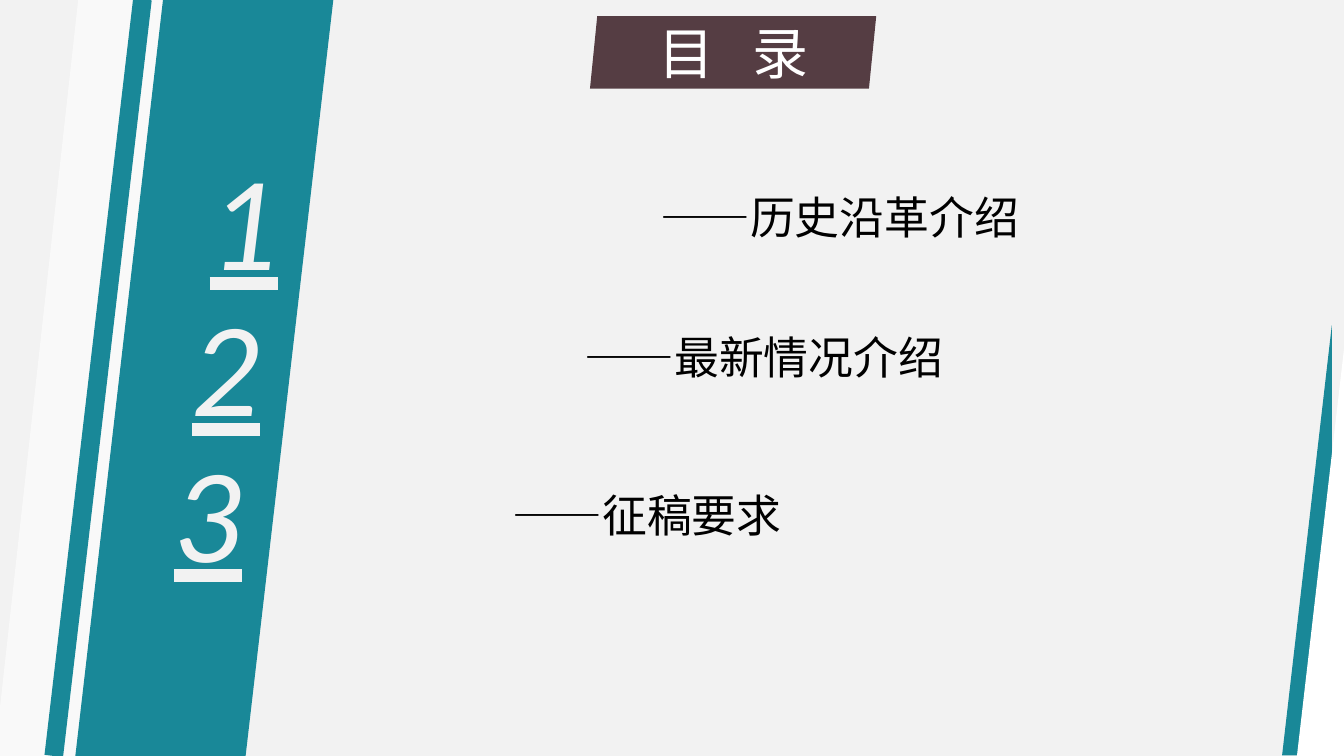
from pptx import Presentation
from pptx.dml.color import RGBColor
from pptx.enum.shapes import MSO_CONNECTOR, MSO_SHAPE as SHAPE
from pptx.enum.text import MSO_ANCHOR, MSO_AUTO_SIZE, PP_ALIGN
from pptx.oxml.ns import qn
from pptx.util import Inches, Pt
from lxml.etree import SubElement

TEAL, WHITE, PALE, PLUM, BLACK = "198898", "FFFFFF", "F2F2F2", "553D43", "000000"

presentation = Presentation()
presentation.slide_width = Inches(10)
presentation.slide_height = presentation.slide_width * 9 // 16
column = presentation.slide_width / 100
row = presentation.slide_height / 100


def paint(fill, color):
    fill.solid()
    fill.fore_color.rgb = RGBColor.from_string(color)


def write(shape, texts, size, color):
    frame = shape.text_frame
    frame.word_wrap = True
    frame.auto_size = MSO_AUTO_SIZE.NONE
    frame.margin_left = frame.margin_right = Inches(0.07)
    frame.margin_top = frame.margin_bottom = Inches(0.04)
    paragraph = frame.paragraphs[0]
    for text in texts:
        paragraph.add_run().text = text
    paragraph.font.name = "Calibri"
    paragraph.font.size = Pt(size)
    paint(paragraph.font.fill, color)
    return paragraph


slide = presentation.slides.add_slide(presentation.slide_layouts[5])
paint(slide.background.fill, PALE)

decorations = [
    (SHAPE.PARALLELOGRAM, -0.4, -0.1, 24.9, 100.1, WHITE, 0.25),
    (SHAPE.PARALLELOGRAM, 5.6, 0, 19.2, 100.1, TEAL, 0.34),
    (SHAPE.RIGHT_TRIANGLE, 95.4, 43.02, 3.7, 56.9, TEAL, None),
    (SHAPE.RIGHT_TRIANGLE, 96.5, 43.2, 3.7, 56.9, WHITE, None),
    (SHAPE.PARALLELOGRAM, 43.9, 2.13, 21.3, 9.6, PLUM, 0.1),
]
panels = []
for kind, left, top, width, height, color, slant in decorations:
    shape = slide.shapes.add_shape(
        kind, int(left * column), int(top * row), int(width * column), int(height * row))
    shape.shadow.inherit = False
    shape.line.fill.background()
    paint(shape.fill, color)
    if slant:
        shape.adjustments[0] = slant
    else:
        shape._element.spPr.xfrm.set("flipH", "1")
    panels.append(shape)
white_color = panels[0]._element.spPr.find(qn("a:solidFill"))[0]
SubElement(white_color, qn("a:alpha"), val="60000")

stripe = slide.shapes.add_connector(
    MSO_CONNECTOR.STRAIGHT,
    int(10.6 * column), int(-0.1 * row), int(4 * column), int(100 * row))
stripe.line.width = Pt(10)
paint(stripe.line.fill, TEAL)
SubElement(stripe._element.spPr, qn("a:effectLst"))

items = [("历史沿革介绍", 48.45, 24.36), ("最新情况介绍", 42.8, 42.95), ("征稿要求", 37.45, 63.75)]
for index, (item, left, top) in enumerate(items):
    number_box = slide.shapes.add_textbox(
        int((14.9 - 1.33 * index) * column), int((17.24 + 19.35 * index) * row),
        int(6.8 * column), int(22.93 * row))
    number = write(number_box, [str(index + 1)], 72, PALE)
    number.font.italic = number.font.underline = True

    item_box = slide.shapes.add_textbox(
        int(left * column), int(top * row), int(42.7 * column), int(8.53 * row))
    write(item_box, ["——" + item], 24, BLACK)

title, title_panel = slide.shapes.title, panels[-1]
title.left, title.top = title_panel.left, title_panel.top
title.width, title.height = title_panel.width, title_panel.height
title_panel._element.addnext(title._element)
heading = write(title, ["目 ", "录"], 30, WHITE)
heading.alignment = PP_ALIGN.CENTER
heading.runs[0].font._element.set("spc", "680")
title.text_frame.vertical_anchor = MSO_ANCHOR.MIDDLE

presentation.save("out.pptx")
